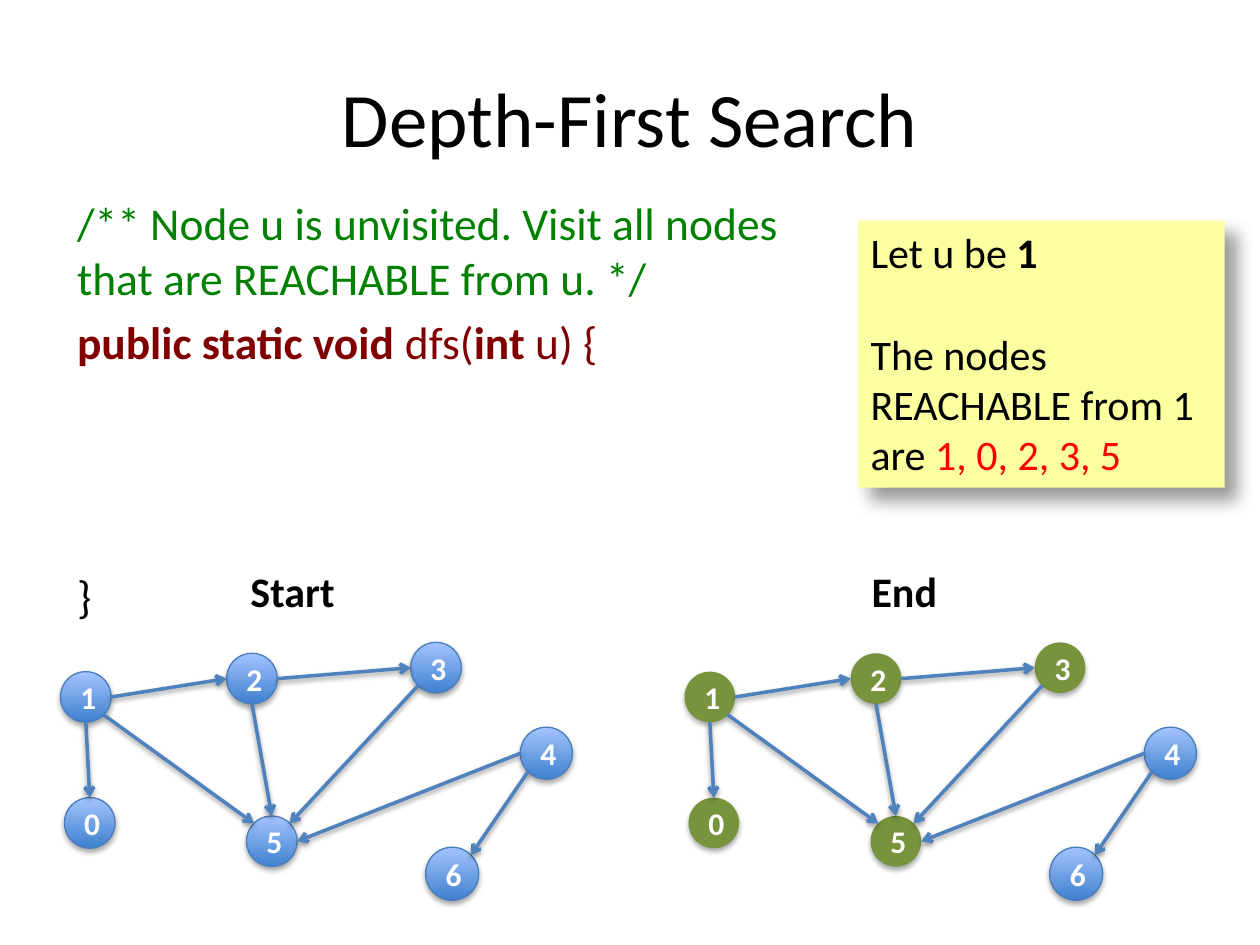
from typing import NamedTuple

from lxml.etree import SubElement
from pptx import Presentation
from pptx.dml.color import RGBColor
from pptx.enum.shapes import MSO_CONNECTOR, MSO_SHAPE
from pptx.enum.text import MSO_ANCHOR, MSO_AUTO_SIZE, PP_ALIGN
from pptx.oxml.ns import qn
from pptx.util import Cm, Pt

FONT = "Calibri"
BLACK = RGBColor(0x00, 0x00, 0x00)
WHITE = RGBColor(0xFF, 0xFF, 0xFF)
RED = RGBColor(0xFF, 0x00, 0x00)
COMMENT_GREEN = RGBColor(0x00, 0x80, 0x00)
CODE_MAROON = RGBColor(0x80, 0x00, 0x00)
NODE_DARK = RGBColor(0x3F, 0x80, 0xCE)
NODE_LIGHT = RGBColor(0xA4, 0xC4, 0xFF)
NODE_LINE = RGBColor(0x4B, 0x7E, 0xBC)
VISITED_GREEN = RGBColor(0x77, 0x93, 0x3C)
EDGE_BLUE = RGBColor(0x4F, 0x81, 0xBD)
NOTE_YELLOW = RGBColor(0xFB, 0xFF, 0x9F)


class Node(NamedTuple):
    label: str
    x: float
    y: float
    size: float = 1.02


class Edge(NamedTuple):
    start: str
    start_side: str
    end: str
    end_side: str


class Graph(NamedTuple):
    title: str
    title_x: float
    title_width: float
    dx: float
    visited: str


class Shadow(NamedTuple):
    alpha: int
    blur: float
    distance: float
    angle: int


NODES = [
    Node("1", 1.22, 13.54), Node("0", 1.3, 16.08), Node("2", 4.57, 13.17),
    Node("5", 4.97, 16.45), Node("3", 8.28, 12.95),
    Node("4", 10.49, 14.66, 1.05), Node("6", 8.58, 17.08, 1.07),
]
EDGES = [
    Edge("1", "S", "0", "N"), Edge("1", "SE", "5", "NW"),
    Edge("1", "E", "2", "W"), Edge("2", "S", "5", "N"),
    Edge("2", "E", "3", "W"), Edge("3", "SW", "5", "NE"),
    Edge("4", "W", "5", "E"), Edge("4", "SW", "6", "NE"),
]
GRAPHS = [
    Graph("Start", 4.8, 2.24, 0, ""),
    Graph("End", 17.32, 1.85, 12.58, "10253"),
]
NODE_SHADOW = Shadow(35, 3.1, 1.8, 90)
EDGE_SHADOW = Shadow(38, 3.1, 1.6, 90)
NOTE_SHADOW = Shadow(40, 10, 10, 45)

# Points on a circle's rim, as fractions of its size
NEAR, FAR = 0.15, 0.85
RIM = {
    "N": (0.5, 0), "S": (0.5, 1), "W": (0, 0.5), "E": (1, 0.5),
    "NW": (NEAR, NEAR), "NE": (FAR, NEAR),
    "SW": (NEAR, FAR), "SE": (FAR, FAR),
}


def place(s, x: float, y: float, w: float, h: float) -> None:
    s.left, s.top, s.width, s.height = Cm(x), Cm(y), Cm(w), Cm(h)


def add_run(p, text: str, size: float, color: RGBColor, bold=False) -> None:
    r = p.add_run()
    r.text = text
    r.font.name, r.font.size, r.font.bold = FONT, Pt(size), bold
    r.font.color.rgb = color


def add_shadow(s, shadow: Shadow) -> None:
    sp_pr = s._element.spPr
    effects = sp_pr.find(qn("a:effectLst"))
    if effects is None:
        effects = SubElement(sp_pr, qn("a:effectLst"))
    outer = SubElement(
        effects, qn("a:outerShdw"), blurRad=str(Pt(shadow.blur)),
        dist=str(Pt(shadow.distance)), dir=str(shadow.angle * 60000),
        algn="ctr", rotWithShape="0")
    color = SubElement(outer, qn("a:srgbClr"), val=str(BLACK))
    SubElement(color, qn("a:alpha"), val=str(shadow.alpha * 1000))


def add_node(shapes, node: Node, dx: float, visited: bool) -> None:
    s = shapes.add_shape(MSO_SHAPE.OVAL, Cm(node.x + dx), Cm(node.y),
                         Cm(node.size), Cm(node.size))
    if visited:
        s.fill.solid()
        s.fill.fore_color.rgb = VISITED_GREEN
        s.line.fill.background()
    else:
        s.fill.gradient()
        s.fill.gradient_angle = 90
        for stop, color in zip(s.fill.gradient_stops, (NODE_DARK, NODE_LIGHT)):
            stop.color.rgb = color
        s.line.color.rgb = NODE_LINE
        s.line.width = Pt(0.75)
    s.shadow.inherit = False
    add_shadow(s, NODE_SHADOW)
    tf = s.text_frame
    tf.vertical_anchor = MSO_ANCHOR.MIDDLE
    p = tf.paragraphs[0]
    p.alignment = PP_ALIGN.CENTER
    add_run(p, node.label, 18, WHITE, True)


def rim_point(node: Node, side: str, dx: float) -> tuple:
    fx, fy = RIM[side]
    return Cm(node.x + dx + fx * node.size), Cm(node.y + fy * node.size)


def add_edge(shapes, edge: Edge, dx: float) -> None:
    by_label = {node.label: node for node in NODES}
    c = shapes.add_connector(
        MSO_CONNECTOR.STRAIGHT,
        *rim_point(by_label[edge.start], edge.start_side, dx),
        *rim_point(by_label[edge.end], edge.end_side, dx))
    c.line.color.rgb = EDGE_BLUE
    c.line.width = Pt(2)
    SubElement(c._element.spPr.find(qn("a:ln")), qn("a:tailEnd"), type="arrow")
    add_shadow(c, EDGE_SHADOW)


def add_graph(s, graph: Graph) -> None:
    shapes = s.shapes.add_group_shape().shapes
    for node in NODES:
        add_node(shapes, node, graph.dx, node.label in graph.visited)
    for edge in EDGES:
        add_edge(shapes, edge, graph.dx)
    box = s.shapes.add_textbox(Cm(graph.title_x), Cm(11.28),
                               Cm(graph.title_width), Cm(1.27))
    box.text_frame.word_wrap = False
    add_run(box.text_frame.paragraphs[0], graph.title, 24, BLACK, True)


def add_code(body) -> None:
    place(body, 1.3, 3.81, 15.44, 10.64)
    tf = body.text_frame
    tf.auto_size = MSO_AUTO_SIZE.NONE
    lines = [
        (5.2, COMMENT_GREEN, [("/** Node u is unvisited. Visit all nodes that "
                               "are REACHABLE from u. */", False)]),
        (5.2, CODE_MAROON, [("public static void ", True), ("dfs(", False),
                            ("int", True), (" u) {", False)]),
        (114, BLACK, [("}", False)]),
    ]
    for i, (space, color, runs) in enumerate(lines):
        p = tf.add_paragraph() if i else tf.paragraphs[0]
        p.space_before = Pt(space)
        p_pr = p._p.get_or_add_pPr()
        p_pr.set("marL", "0")
        p_pr.set("indent", "0")
        SubElement(p_pr, qn("a:buNone"))
        for text, bold in runs:
            add_run(p, text, 26, color, bold)


def add_note(s) -> None:
    note = s.shapes.add_shape(MSO_SHAPE.RECTANGLE, Cm(17.3), Cm(4.45),
                              Cm(7.39), Cm(5.38))
    note.fill.solid()
    note.fill.fore_color.rgb = NOTE_YELLOW
    note.line.fill.background()
    note.shadow.inherit = False
    add_shadow(note, NOTE_SHADOW)
    tf = note.text_frame
    tf.word_wrap = True
    tf.vertical_anchor = MSO_ANCHOR.TOP
    p = tf.paragraphs[0]
    add_run(p, "Let u be ", 24, BLACK)
    add_run(p, "1", 24, BLACK, True)
    q = tf.add_paragraph()
    q.space_before = Pt(29)
    add_run(q, "The nodes REACHABLE from 1 are ", 24, BLACK)
    add_run(q, "1, 0, 2, 3, 5", 24, RED)
    p.alignment = q.alignment = PP_ALIGN.LEFT


def main() -> None:
    prs = Presentation()
    prs.slide_width, prs.slide_height = Cm(25.4), Cm(19.05)
    s = prs.slides.add_slide(prs.slide_layouts[1])
    # Title and code
    title, body = s.placeholders
    place(title, 1.27, 0.76, 22.86, 3.18)
    add_run(title.text_frame.paragraphs[0], "Depth-First Search", 44, BLACK)
    add_code(body)
    # Graphs before and after the search
    for graph in GRAPHS:
        add_graph(s, graph)
    add_note(s)
    prs.save("out.pptx")


if __name__ == "__main__":
    main()
